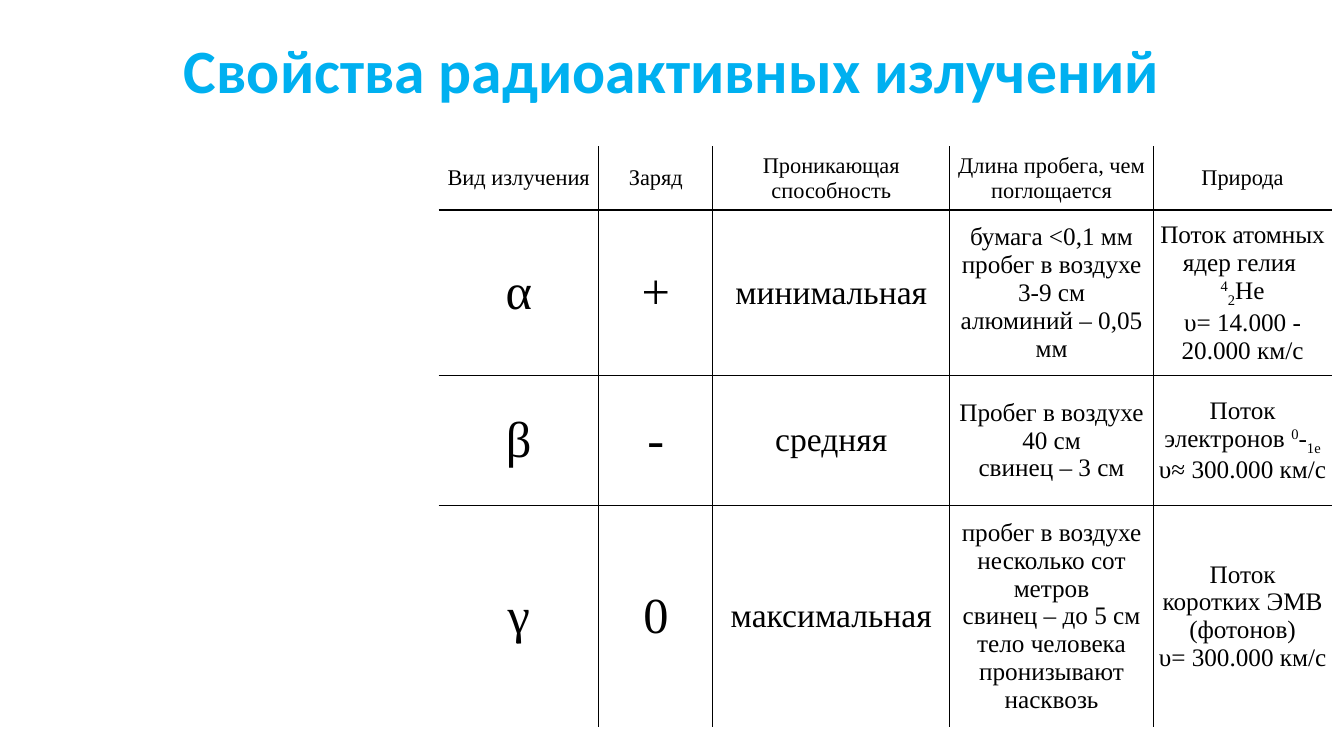
from typing import NamedTuple

from lxml import etree
from pptx import Presentation
from pptx import util as u
from pptx.dml.color import RGBColor
from pptx.enum import text
from pptx.oxml.ns import qn

PX = 9144  # 100 px to the inch
COLORS = {"title": "00B0F0", "ink": "000000"}
RAISED, LOWERED = 30, -25


class Run(NamedTuple):
    text: str
    baseline: int = 0


class Radiation(NamedTuple):
    symbol: str
    charge: str
    penetration: str
    absorption: str
    nature: list[Run]


HEADINGS = ["Вид излучения", "Заряд", "Проникающая способность",
            "Длина пробега, чем поглощается", "Природа"]
HEADING_SIZE = 16
COLUMN_SIZES = [36, 36, 24, 18, 18]
COLUMN_WIDTHS = [159, 113, 235, 202, 177]
ROW_HEIGHTS = [62, 142, 129, 195]

RADIATIONS = [
    Radiation("α", "+", "минимальная",
              "бумага <0,1 мм\nпробег в воздухе 3-9 см\nалюминий – 0,05 мм",
              [Run("Поток атомных ядер гелия  "), Run("4", RAISED), Run("2", LOWERED),
               Run("Не\nυ= 14.000 - 20.000 км/с")]),
    Radiation("β", "-", "средняя",
              "Пробег в воздухе 40 см\nсвинец – 3 см",
              [Run("Поток электронов "), Run("0", RAISED), Run("-"), Run("1e", LOWERED),
               Run("\nυ≈ 300.000 км/с")]),
    Radiation("γ", "0", "максимальная",
              "пробег в воздухе несколько сот метров\nсвинец – до 5 см\n"
              "тело человека пронизывают насквозь",
              [Run("Поток коротких ЭМВ (фотонов)\nυ= 300.000 км/с")]),
]


def px(n: int) -> u.Emu:
    return u.Emu(n * PX)


def style_paragraph(p, font: str, size: int, color: str, bold: bool = False) -> None:
    p.alignment = text.PP_ALIGN.CENTER
    p.font.name, p.font.size, p.font.bold = font, u.Pt(size), bold
    p.font.color.rgb = RGBColor.from_string(COLORS[color])


def add_runs(p, runs: list[Run]) -> None:
    for run in runs:
        for i, line in enumerate(run.text.split("\n")):
            if i:
                p.add_line_break()
            if line:
                r = p.add_run()
                r.text = line
                if run.baseline:
                    r.font._element.set("baseline", str(run.baseline * 1000))


def set_borders(cell, visible: dict[str, bool]) -> None:
    tc_pr = cell._tc.get_or_add_tcPr()
    for i, (side, shown) in enumerate(visible.items()):
        ln = etree.Element(qn(f"a:ln{side}"), w=str(u.Pt(1)))
        tc_pr.insert(i, ln)
        if shown:
            fill = etree.SubElement(ln, qn("a:solidFill"))
            etree.SubElement(fill, qn("a:srgbClr"), val=COLORS["ink"])
        else:
            etree.SubElement(ln, qn("a:noFill"))


def fill_cell(cell, runs: list[Run], size: int) -> None:
    cell.fill.background()
    cell.vertical_anchor = text.MSO_ANCHOR.MIDDLE
    cell.margin_left = cell.margin_right = px(5)
    cell.margin_top = cell.margin_bottom = px(5)
    p = cell.text_frame.paragraphs[0]
    add_runs(p, runs)
    style_paragraph(p, "Times New Roman", size, "ink")


def add_title(slide) -> None:
    tf = slide.shapes.add_textbox(px(92), px(0), px(1150), px(145)).text_frame
    tf.word_wrap = True
    tf.vertical_anchor = text.MSO_ANCHOR.MIDDLE
    p = tf.paragraphs[0]
    p.text = "Свойства радиоактивных излучений"
    p.line_spacing = 0.9
    style_paragraph(p, "Calibri", 44, "title", bold=True)


def add_properties_table(slide) -> None:
    rows = [[[Run(h)] for h in HEADINGS]]
    rows += [[[Run(t)] for t in rad[:-1]] + [rad.nature] for rad in RADIATIONS]
    last_row, last_col = len(rows) - 1, len(HEADINGS) - 1
    table = slide.shapes.add_table(
        len(rows), len(HEADINGS), px(435), px(145),
        px(sum(COLUMN_WIDTHS)), px(sum(ROW_HEIGHTS))).table
    table.first_row = table.horz_banding = False
    for column, width in zip(table.columns, COLUMN_WIDTHS):
        column.width = px(width)
    for row, height in zip(table.rows, ROW_HEIGHTS):
        row.height = px(height)

    # Only inner grid lines are drawn
    for i, row in enumerate(rows):
        for j, runs in enumerate(row):
            cell = table.cell(i, j)
            fill_cell(cell, runs, COLUMN_SIZES[j] if i else HEADING_SIZE)
            set_borders(cell, {"L": j > 0, "R": j < last_col,
                               "T": i > 0, "B": i < last_row})


def main() -> None:
    prs = Presentation()
    prs.slide_width, prs.slide_height = px(1333), px(750)
    slide = prs.slides.add_slide(prs.slide_layouts[6])
    add_title(slide)
    add_properties_table(slide)
    prs.save("out.pptx")


if __name__ == "__main__":
    main()
